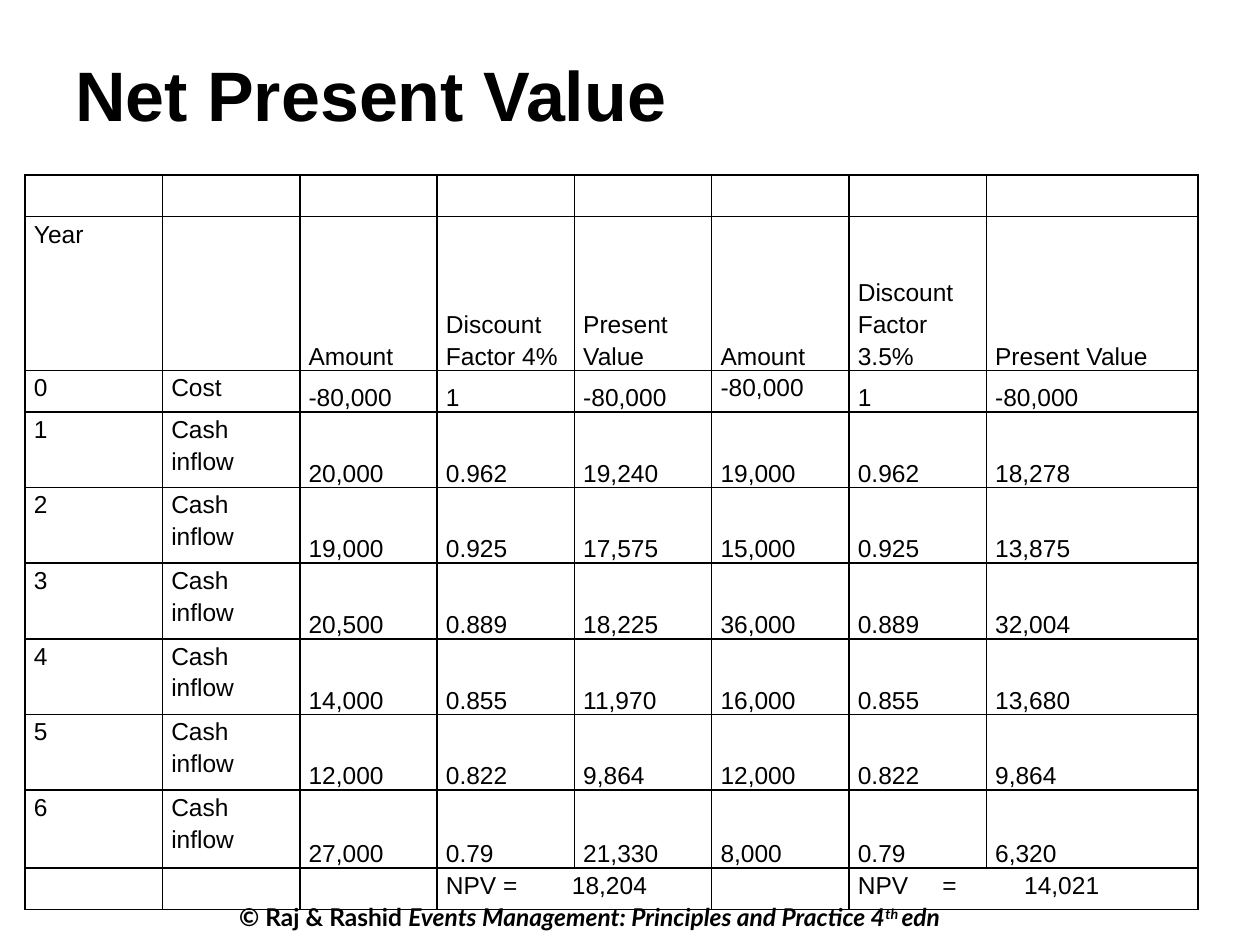
from dataclasses import dataclass

from lxml.etree import SubElement
from pptx import Presentation
from pptx.dml.color import RGBColor
from pptx.enum.text import MSO_ANCHOR
from pptx.oxml.ns import qn
from pptx.slide import Slide
from pptx.util import Inches, Pt

YEARS = [
    ("20,000", "0.962", "19,240", "19,000", "18,278"),
    ("19,000", "0.925", "17,575", "15,000", "13,875"),
    ("20,500", "0.889", "18,225", "36,000", "32,004"),
    ("14,000", "0.855", "11,970", "16,000", "13,680"),
    ("12,000", "0.822", "9,864", "12,000", "9,864"),
    ("27,000", "0.79", "21,330", "8,000", "6,320"),
]
HEADINGS = ["Year", "", "Amount", "Discount Factor 4%", "Present Value",
            "Amount", "Discount Factor 3.5%", "Present Value"]
COST = ["0", "Cost", "-80,000", "1", "-80,000", "-80,000", "1", "-80,000"]
TOTALS = ["", "", "", "NPV =\t18,204", "", "", "NPV\t=\t14,021", ""]
COLUMN_WIDTHS = [10.9] * 7 + [16.8]
ROW_HEIGHTS = [3.3, 12.2, 3.3] + [6] * 5 + [6.2, 3.3]


def color(value):
    return RGBColor.from_string(value)


def grid(units):
    return Inches(units / 10)


@dataclass
class SlideBuilder:
    """Draws styled elements on a slide measured as 100 columns by 75 rows."""

    slide: Slide
    font_name: str = "Arial"
    footer_font: str = "Lato"
    ink: str = "000000"
    text_size: int = 14

    def style(self, font, size, name, bold=False):
        font.name, font.size, font.bold = name, Pt(size), bold
        font.color.rgb = color(self.ink)

    def text_box(self, column, row, width, height, inset=0.05):
        shape = self.slide.shapes.add_textbox(*map(grid, (column, row, width, height)))
        shape.text_frame.word_wrap = True
        shape.text_frame.margin_top = Inches(inset)
        return shape.text_frame.paragraphs[0]

    def title(self, text):
        paragraph = self.text_box(5, 3, 90, 10, inset=0.11)
        paragraph.text = text
        self.style(paragraph.font, 40, self.font_name, bold=True)

    def footer(self, parts):
        paragraph = self.text_box(18, 71.1, 69.7, 3.4)
        for text, italic, baseline in parts:
            run = paragraph.add_run()
            run.text = text
            run.font.italic = italic
            if baseline:
                run.font._element.set("baseline", str(baseline))
        self.style(paragraph.font, self.text_size, self.footer_font, bold=True)

    def borders(self, cell):
        properties = cell._tc.get_or_add_tcPr()
        for side in ("a:lnL", "a:lnR", "a:lnT", "a:lnB"):
            line = SubElement(properties, qn(side), w=str(Pt(1)))
            fill = SubElement(line, qn("a:solidFill"))
            SubElement(fill, qn("a:srgbClr"), val=self.ink)

    def cell(self, cell, text, anchor, tabs):
        self.borders(cell)
        cell.fill.background()
        cell.margin_left = cell.margin_right = Inches(0.07)
        cell.margin_top = cell.margin_bottom = 0
        cell.vertical_anchor = anchor
        paragraph = cell.text_frame.paragraphs[0]
        paragraph.text = text
        if "\t" in text:
            tab_list = SubElement(paragraph._p.get_or_add_pPr(), qn("a:tabLst"))
            for position in tabs:
                SubElement(tab_list, qn("a:tab"), pos=str(Inches(position)), algn="l")
        paragraph.line_spacing = 1.15
        self.style(paragraph.font, self.text_size, self.font_name)

    def table(self, column, row, widths, heights, rows, top_cells, tabs, merges):
        frame = self.slide.shapes.add_table(
            len(heights), len(widths), *map(grid, (column, row, sum(widths), sum(heights))))
        table = frame.table
        table.first_row = table.horz_banding = False
        for table_column, width in zip(table.columns, widths):
            table_column.width = grid(width)
        for table_row, height in zip(table.rows, heights):
            table_row.height = grid(height)
        for r, texts in enumerate(rows):
            for c, text in enumerate(texts):
                at_top = c < 2 or r == len(rows) - 1 or (r, c) in top_cells
                anchor = MSO_ANCHOR.TOP if at_top else MSO_ANCHOR.BOTTOM
                self.cell(table.cell(r, c), text, anchor, tabs.get(c, ()))
        for r, c in merges:
            table.cell(r, c).merge(table.cell(r, c + 1))


def main():
    presentation = Presentation()
    presentation.slide_width, presentation.slide_height = grid(100), grid(75)
    builder = SlideBuilder(presentation.slides.add_slide(presentation.slide_layouts[6]))
    builder.footer([
        ("© Raj & Rashid ", False, 0),
        ("Events Management: Principles and Practice 4", True, 0),
        ("th ", True, 30000),
        ("edn", True, 0),
    ])
    builder.title("Net Present Value")
    inflows = [
        [str(year), "Cash inflow", amount, factor, value, second_amount, factor, second_value]
        for year, (amount, factor, value, second_amount, second_value) in enumerate(YEARS, 1)
    ]
    rows = [[""] * len(HEADINGS), HEADINGS, COST, *inflows, TOTALS]
    builder.table(2, 13.9, COLUMN_WIDTHS, ROW_HEIGHTS, rows, top_cells={(2, 5)},
                  tabs={3: [1], 6: [0.67, 1.32]}, merges=[(9, 3), (9, 6)])
    presentation.save("out.pptx")


if __name__ == "__main__":
    main()
